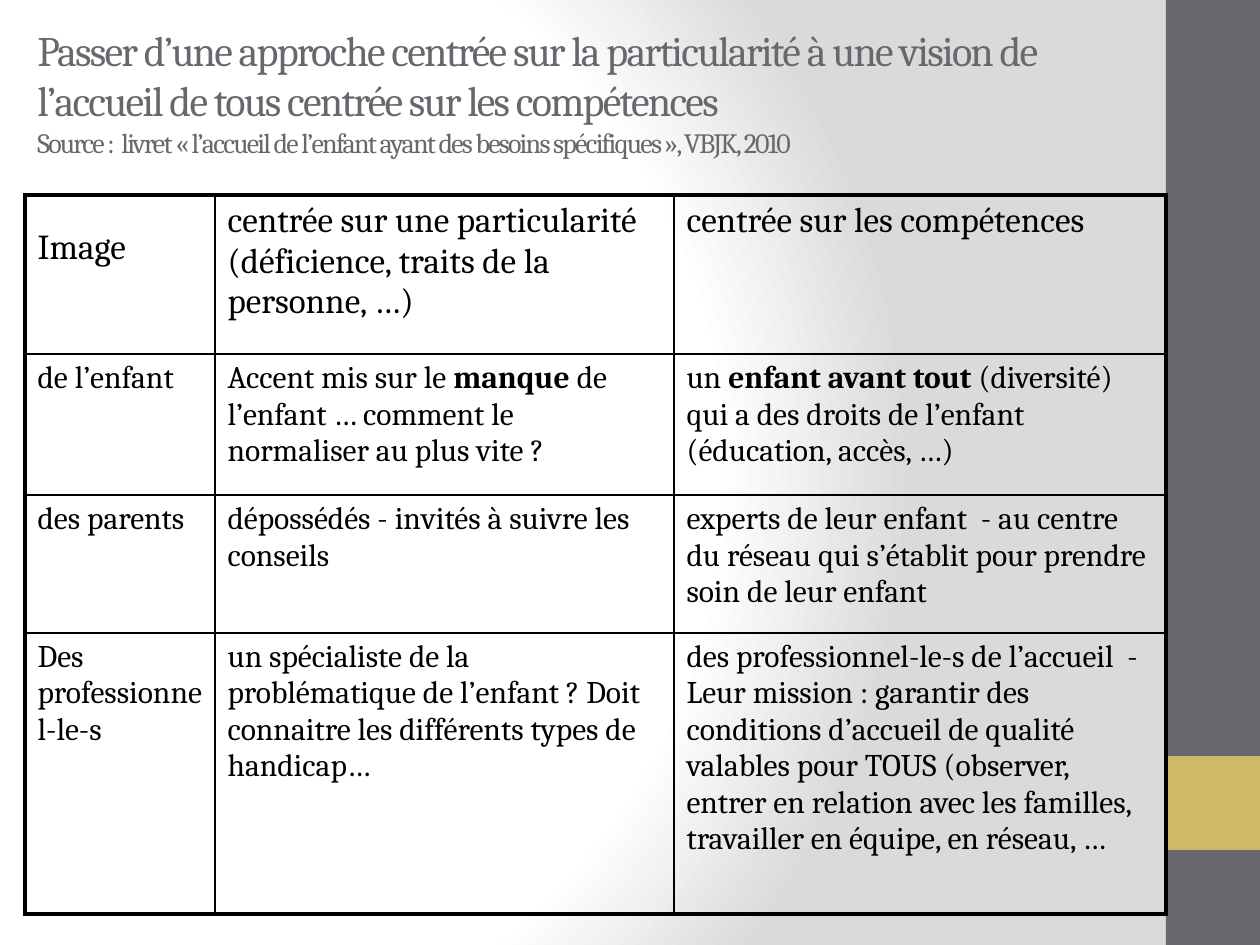
from lxml.etree import SubElement
from pptx import Presentation
from pptx.dml.color import RGBColor
from pptx.enum.shapes import MSO_SHAPE as Shape
from pptx.enum.text import MSO_ANCHOR as Anchor
from pptx.oxml.ns import qn
from pptx.util import Emu, Pt

FONT = "Cambria"
GREY, GOLD, BLACK = "69676D", "CEB966", "000000"

TITLE = [
    ("Passer d’une approche centrée sur la particularité à une vision de "
     "l’accueil de tous centrée sur les compétences", 24),
    ("Source :  livret «\u00a0l’accueil de l’enfant ayant des besoins spécifiques\u00a0», "
     "VBJK, 2010", 16),
]
# Text between ** marks is bold
ROWS = [
    ("Image",
     "centrée sur une particularité (déficience, traits de la personne, …)",
     "centrée sur les compétences"),
    ("de l’enfant",
     "Accent mis sur le **manque** de l’enfant … comment le normaliser au plus vite ?",
     "un **enfant avant tout** (diversité) qui a des droits de l’enfant "
     "(éducation, accès, …)"),
    ("des parents",
     "dépossédés - invités à suivre les conseils",
     "experts de leur enfant  - au centre du réseau qui s’établit pour prendre "
     "soin de leur enfant"),
    ("Des professionnel-le-s",
     "un spécialiste de la problématique de l’enfant ? Doit connaitre les différents "
     "types de handicap…",
     "des professionnel-le-s de l’accueil  - Leur mission : garantir des conditions "
     "d’accueil de qualité  valables pour TOUS (observer, entrer en relation avec les "
     "familles, travailler en équipe, en réseau, …"),
]
COLUMN_WIDTHS = [190, 459, 492]
ROW_HEIGHTS = [159, 141, 138, 281]
SIDEBAR = [((1166, 0, 94, 945), GREY), ((1166, 756, 94, 94), GOLD)]
GRADIENT = [(0, "FFFFFF"), (75, "FFFFFF"), (100, "DADADA")]
GRADIENT_FOCUS = {"l": 20, "t": 50, "r": 100, "b": 50}


def px(value):
    return Emu(round(value * 914400 / 126))


def color(value):
    return RGBColor.from_string(value)


def add_xml(parent, tag, **attributes):
    return SubElement(parent, qn(tag), {key: str(value) for key, value in attributes.items()})


def set_background(slide):
    slide.background.fill.gradient()
    gradient = next(slide.element.iter(qn("a:gradFill")))
    for child in list(gradient):
        gradient.remove(child)
    stops = add_xml(gradient, "a:gsLst")
    for position, value in GRADIENT:
        stop = add_xml(stops, "a:gs", pos=position * 1000)
        add_xml(stop, "a:srgbClr", val=value)
    circle = add_xml(gradient, "a:path", path="circle")
    add_xml(circle, "a:fillToRect",
            **{side: share * 1000 for side, share in GRADIENT_FOCUS.items()})


def set_borders(cell, outer_sides):
    properties = cell._tc.get_or_add_tcPr()
    for index, side in enumerate("LRTB"):
        width = 2.25 if side in outer_sides else 1
        line = add_xml(properties, f"a:ln{side}", w=Pt(width))
        add_xml(add_xml(line, "a:solidFill"), "a:srgbClr", val=BLACK)
        # Borders come before the fill
        properties.remove(line)
        properties.insert(index, line)


def fill_cell(cell, text, size):
    cell.fill.background()
    paragraph = cell.text_frame.paragraphs[0]
    paragraph.font.name, paragraph.font.size = FONT, Pt(size)
    paragraph.font.color.rgb = color(BLACK)
    for index, part in enumerate(text.split("**")):
        run = paragraph.add_run()
        run.text = part
        if index % 2:
            run.font.bold = True


presentation = Presentation()
presentation.slide_width, presentation.slide_height = px(1260), px(945)
slide = presentation.slides.add_slide(presentation.slide_layouts[6])
set_background(slide)

# Sidebar
for box, fill in SIDEBAR:
    bar = slide.shapes.add_shape(Shape.RECTANGLE, *map(px, box))
    bar.shadow.inherit = False
    bar.fill.solid()
    bar.fill.fore_color.rgb = color(fill)
    bar.line.fill.background()

# Title and source
frame = slide.shapes.add_textbox(*map(px, (25, 26, 1111, 131))).text_frame
frame.word_wrap = True
frame.vertical_anchor = Anchor.MIDDLE
paragraph = frame.paragraphs[0]
paragraph.font.name = FONT
paragraph.font.color.rgb = color(GREY)
for index, (text, size) in enumerate(TITLE):
    if index:
        paragraph.add_line_break()
    run = paragraph.add_run()
    run.text = text
    run.font.size = Pt(size)
    run.font._element.set("spc", "-100")

# Comparison table
table = slide.shapes.add_table(
    len(ROWS), len(COLUMN_WIDTHS), px(25), px(195),
    px(sum(COLUMN_WIDTHS)), px(sum(ROW_HEIGHTS))).table
table.first_row = table.horz_banding = False
for column, width in zip(table.columns, COLUMN_WIDTHS):
    column.width = px(width)
for row, height in zip(table.rows, ROW_HEIGHTS):
    row.height = px(height)
last_row, last_column = len(ROWS) - 1, len(COLUMN_WIDTHS) - 1
for r, texts in enumerate(ROWS):
    for c, text in enumerate(texts):
        cell = table.cell(r, c)
        fill_cell(cell, text, 18 if r else 20)
        edges = {"L": c == 0, "R": c == last_column, "T": r == 0, "B": r == last_row}
        set_borders(cell, [side for side, outer in edges.items() if outer])
table.cell(0, 0).margin_top = px(33)

presentation.save("out.pptx")
